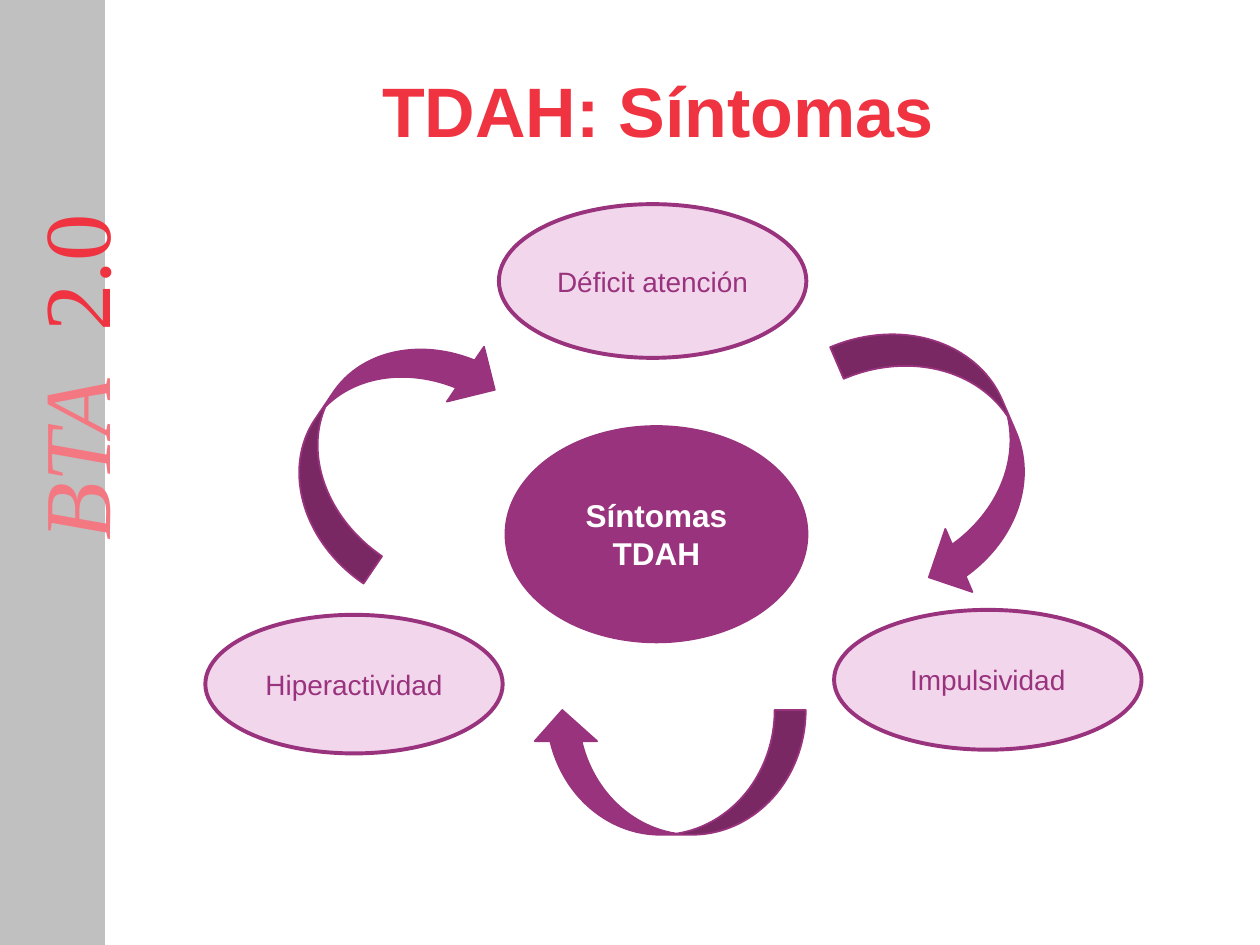
from pptx import Presentation
from pptx.dml.color import RGBColor
from pptx.enum.shapes import MSO_SHAPE
from pptx.enum.text import MSO_ANCHOR, PP_ALIGN
from pptx.util import Inches, Pt

RECTANGLE, ELLIPSE = MSO_SHAPE.RECTANGLE, MSO_SHAPE.OVAL
CURVED_ARROW = MSO_SHAPE.CURVED_LEFT_ARROW
TOP, MIDDLE = MSO_ANCHOR.TOP, MSO_ANCHOR.MIDDLE
LEFT, CENTER = PP_ALIGN.LEFT, PP_ALIGN.CENTER

WIDTH, HEIGHT = 10, 7.5
COLUMNS, ROWS = 100, 75
RED, PINK, GREY, WHITE = "EF3340", "F47881", "C0C0C0", "FFFFFF"
PURPLE, LILAC = "99337E", "F2D6EB"


def color(value):
    return RGBColor.from_string(value)


class SlideBuilder:
    """Holds the slide and its style; frames are columns and rows."""

    font = "Arial"
    side_font = "Times New Roman"

    def __init__(self, slide):
        self.slide = slide

    def place(self, frame):
        left, top, width, height = frame
        column, row = WIDTH / COLUMNS, HEIGHT / ROWS
        return (Inches(left * column), Inches(top * row),
                Inches(width * column), Inches(height * row))

    def span(self, para, text, size, ink, font=None, bold=False, italic=False):
        span = para.add_run()
        span.text = text
        span.font.name = font or self.font
        span.font.size = Pt(size)
        span.font.bold, span.font.italic = bold, italic
        span.font.color.rgb = color(ink)
        return span

    def paragraph(self, box, align=CENTER, anchor=MIDDLE, wrap=True):
        box.text_frame.word_wrap = wrap
        box.text_frame.vertical_anchor = anchor
        para = box.text_frame.paragraphs[0]
        para.alignment = align
        return para

    def title(self, frame, text):
        box = self.slide.shapes.title
        box.left, box.top, box.width, box.height = self.place(frame)
        self.span(self.paragraph(box), text, 40, RED, bold=True)

    def shape(self, kind, frame, fill, line, weight, rotation=0):
        shape = self.slide.shapes.add_shape(kind, *self.place(frame))
        shape.shadow.inherit = False
        shape.rotation = rotation
        shape.fill.solid()
        shape.fill.fore_color.rgb = color(fill)
        shape.line.color.rgb = color(line)
        shape.line.width = Pt(weight)
        return shape

    def ellipse(self, frame, text, fill=LILAC, ink=PURPLE, size=16, bold=False):
        shape = self.shape(ELLIPSE, frame, fill, PURPLE, 2.25)
        self.span(self.paragraph(shape), text, size, ink, bold=bold)

    def arrow(self, frame, rotation):
        self.shape(CURVED_ARROW, frame, PURPLE, PURPLE, 1, rotation)

    def side_label(self, frame, name, version):
        box = self.slide.shapes.add_textbox(*self.place(frame))
        box.rotation = 270
        box.text_frame.margin_top = Inches(0.12)
        para = self.paragraph(box, LEFT, TOP, wrap=False)
        self.span(para, name, 54, PINK, self.side_font, italic=True)
        gap = self.span(para, " ", 54, PINK, self.side_font, italic=True)
        gap.font._element.set("spc", "1350")  # widens the gap to two spaces
        self.span(para, version, 54, RED, self.side_font)


def main():
    deck = Presentation()
    deck.slide_width, deck.slide_height = Inches(WIDTH), Inches(HEIGHT)
    page = SlideBuilder(deck.slides.add_slide(deck.slide_layouts[5]))

    # Side band
    page.shape(RECTANGLE, (0, 0, 8.3, 75), GREY, GREY, 0.75)
    page.side_label((-11.1, 22.7, 32.3, 10), "BTA", "2.0")

    page.title((11.2, 4.4, 83.6, 8.5), "TDAH: Síntomas ")

    # Centre of the cycle and its three symptoms
    page.ellipse((40.2, 33.9, 23.8, 17), "Síntomas TDAH", PURPLE, WHITE, 18, True)
    for frame, symptom in (
        ((39.6, 16.2, 24.4, 12.2), "Déficit atención"),
        ((16.3, 48.8, 23.6, 11), "Hiperactividad"),
        ((66.2, 48.4, 24.4, 11.1), "Impulsividad"),
    ):
        page.ellipse(frame, symptom)

    # Arrows between the symptoms, clockwise
    for frame, rotation in (
        ((69.9, 24.5, 10.9, 22.6), 336.8),
        ((48.1, 50.4, 9.9, 21.8), 90),
        ((25.2, 24, 10.5, 21.2), 214.1),
    ):
        page.arrow(frame, rotation)

    deck.save("out.pptx")


if __name__ == "__main__":
    main()
